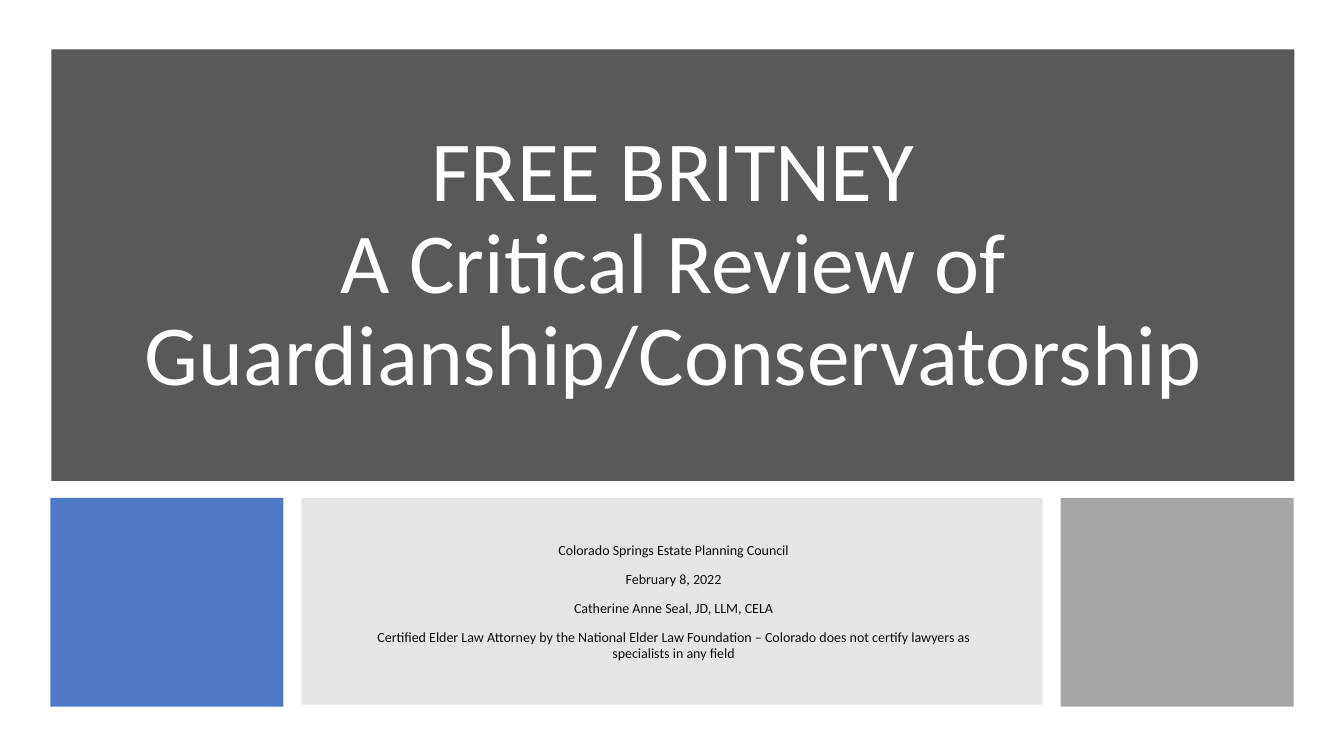
from dataclasses import dataclass

from lxml import etree
from pptx import Presentation
from pptx.dml.color import RGBColor
from pptx.enum.shapes import MSO_SHAPE
from pptx.enum.text import MSO_ANCHOR, MSO_AUTO_SIZE, PP_ALIGN
from pptx.oxml.ns import qn
from pptx.util import Inches, Pt

RECTANGLE = MSO_SHAPE.RECTANGLE
MIDDLE = MSO_ANCHOR.MIDDLE
NO_FIT = MSO_AUTO_SIZE.NONE
CENTER = PP_ALIGN.CENTER
TITLE_ONLY = 5


@dataclass(frozen=True)
class Theme:
    font: str = "Calibri"
    title_size: int = 61
    details_size: int = 10
    paragraph_gap: int = 10
    line_spacing: float = 0.9
    banner: str = "595959"
    accent: str = "4472C4"
    details_panel: str = "7F7F7F"
    side_panel: str = "A5A5A5"
    title_text: str = "FFFFFF"
    details_text: str = "0D0D0D"


@dataclass(frozen=True)
class Box:
    left: float
    top: float
    width: float
    height: float


@dataclass(frozen=True)
class Panel:
    box: Box
    color: str
    opacity: int = 100


THEME = Theme()
ROW_TOP = 4.94

PANELS = [
    Panel(Box(0.51, 0.49, 12.33, 4.28), THEME.banner),
    Panel(Box(0.5, ROW_TOP, 2.31, 2.07), THEME.accent, 95),
    Panel(Box(2.99, ROW_TOP, 7.35, 2.05), THEME.details_panel, 20),
    Panel(Box(10.52, ROW_TOP, 2.31, 2.07), THEME.side_panel),
]

TITLE_BOX = Box(1.2, 1.2, 10.95, 2.87)
TITLE_LINES = ["FREE BRITNEY", "A Critical Review of Guardianship/Conservatorship"]

DETAILS_BOX = Box(3.53, 5.3, 6.3, 1.35)
DETAILS = [
    "Colorado Springs Estate Planning Council",
    "February 8, 2022",
    "Catherine Anne Seal, JD, LLM, CELA",
    "Certified Elder Law Attorney by the National Elder Law Foundation – "
    "Colorado does not certify lawyers as specialists in any field",
]


def apply_format(target, values: dict) -> None:
    for name, value in values.items():
        setattr(target, name, value)


def bounds(box: Box) -> dict:
    return {
        "left": Inches(box.left),
        "top": Inches(box.top),
        "width": Inches(box.width),
        "height": Inches(box.height),
    }


def add_panel(page, panel: Panel) -> None:
    shape = page.shapes.add_shape(RECTANGLE, **bounds(panel.box))
    shape.shadow.inherit = False
    shape.line.fill.background()
    shape.fill.solid()
    shape.fill.fore_color.rgb = RGBColor.from_string(panel.color)
    if panel.opacity < 100:
        color = shape.element.spPr.find(qn("a:solidFill"))[0]
        etree.SubElement(color, qn("a:alpha"), val=str(panel.opacity * 1000))


def format_frame(frame) -> None:
    apply_format(frame, {"word_wrap": True, "auto_size": NO_FIT,
                         "vertical_anchor": MIDDLE})


def format_paragraph(para, size: int, color: str, gap: int = 0) -> None:
    apply_format(para, {"alignment": CENTER, "line_spacing": THEME.line_spacing,
                        "space_before": Pt(gap)})
    for span in para.runs:
        apply_format(span.font, {"name": THEME.font, "size": Pt(size)})
        span.font.color.rgb = RGBColor.from_string(color)


def place_title(page) -> None:
    title = page.shapes.title
    # Bring the title in front of the banner
    page.shapes.element.append(title.element)
    apply_format(title, bounds(TITLE_BOX))
    format_frame(title.text_frame)
    para = title.text_frame.paragraphs[0]
    for index, line in enumerate(TITLE_LINES):
        if index:
            para.add_line_break()
        para.add_run().text = line
    format_paragraph(para, THEME.title_size, THEME.title_text)


def add_details(page) -> None:
    frame = page.shapes.add_textbox(**bounds(DETAILS_BOX)).text_frame
    format_frame(frame)
    for index, line in enumerate(DETAILS):
        para = frame.add_paragraph() if index else frame.paragraphs[0]
        para.add_run().text = line
        gap = THEME.paragraph_gap if index else 0
        format_paragraph(para, THEME.details_size, THEME.details_text, gap)


def main() -> None:
    deck = Presentation()
    apply_format(deck, {"slide_width": Inches(13.33), "slide_height": Inches(7.5)})
    page = deck.slides.add_slide(deck.slide_layouts[TITLE_ONLY])

    # Colored panels
    for panel in PANELS:
        add_panel(page, panel)

    # Title and speaker details
    place_title(page)
    add_details(page)

    deck.save("out.pptx")


if __name__ == "__main__":
    main()
